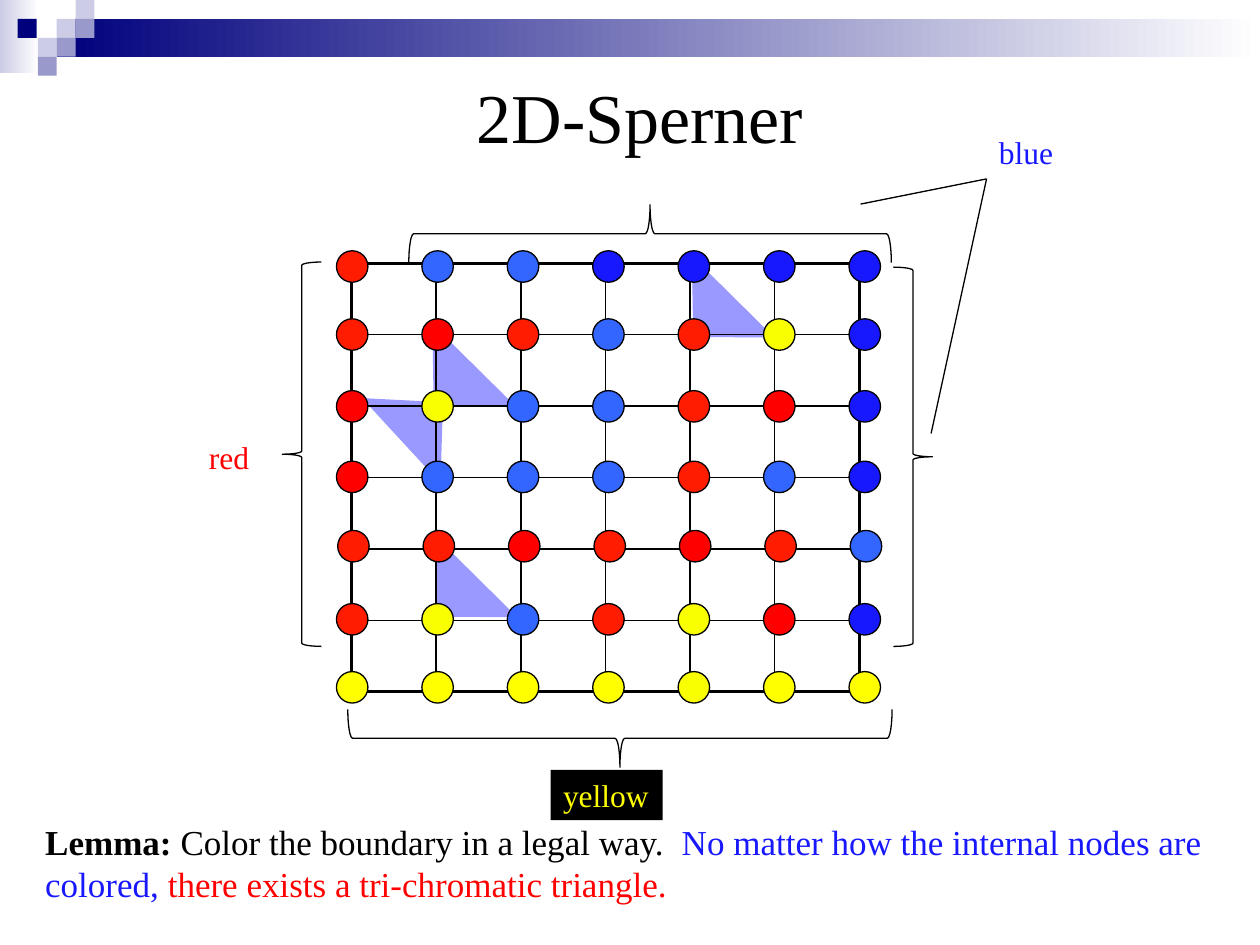
import pptx
import pptx.util
import pptx.dml.color
import pptx.enum.shapes
import pptx.enum.text
import lxml.etree
from pptx.oxml import parse_xml
from pptx.oxml.ns import nsdecls, qn

COLORS = {
    "black": "000000", "white": "FFFFFF", "navy": "00007D",
    "lavender": "CCCCE6", "violet": "9999CC", "triangle": "9999FF",
    "R": "FF0000", "V": "FF1C00", "L": "3366FF", "B": "1818FF",
    "Y": "FFFF00", "y": "F9FF00",
}
RGB = {name: pptx.dml.color.RGBColor.from_string(code) for name, code in COLORS.items()}
SHAPE = pptx.enum.shapes.MSO_SHAPE
FIT = pptx.enum.text.MSO_AUTO_SIZE.SHAPE_TO_FIT_TEXT
Pt = pptx.util.Pt

deck = pptx.Presentation()
deck.slide_width, deck.slide_height = pptx.util.Inches(10), pptx.util.Inches(7.5)
COL, ROW = deck.slide_width / 100, deck.slide_height / 75
slide = deck.slides.add_slide(deck.slide_layouts[5])
shapes = slide.shapes


def box(left, top, width, height):
    """Turn columns and rows of the slide grid into lengths."""
    return int(left * COL), int(top * ROW), int(width * COL), int(height * ROW)


def draw(kind, area, fill=None, line=None, rotation=0):
    """Add a preset shape; two fill names make a left-to-right gradient."""
    shape = shapes.add_shape(kind, *box(*area))
    shape.shadow.inherit = False
    shape.rotation = rotation
    if isinstance(fill, tuple):
        shape.fill.gradient()
        shape.fill.gradient_angle = 0
        for stop, name in zip(shape.fill.gradient_stops, fill):
            stop.color.rgb = RGB[name]
    elif fill:
        shape.fill.solid()
        shape.fill.fore_color.rgb = RGB[fill]
    else:
        shape.fill.background()
    if line:
        shape.line.color.rgb = RGB[line]
        shape.line.width = Pt(0.75)
    else:
        shape.line.fill.background()


# Banner with its checkered corner
draw(SHAPE.RECTANGLE, (0, 0, 3.1, 5.8), ("lavender", "white"))
draw(SHAPE.RECTANGLE, (4.5, 1.5, 95.5, 3), ("navy", "white"))
for left, top, color in [
    (4.5, 1.5, "lavender"), (6, 0, "lavender"), (6, 1.5, "violet"),
    (3, 3, "lavender"), (1.4, 1.5, "navy"), (4.5, 3, "violet"), (3, 4.5, "violet"),
]:
    draw(SHAPE.RECTANGLE, (left, top, 1.5, 1.5), color)

# Title
title = shapes.title
title.left, title.top, title.width, title.height = box(5.8, 1.7, 90, 15)
title.text_frame.text = "2D-Sperner"
title.text_frame.vertical_anchor = pptx.enum.text.MSO_ANCHOR.MIDDLE
title.text_frame.paragraphs[0].alignment = pptx.enum.text.PP_ALIGN.CENTER
title_font = title.text_frame.paragraphs[0].runs[0].font
for attribute, value in {"name": "Times New Roman", "size": Pt(40)}.items():
    setattr(title_font, attribute, value)
title_font.color.rgb = RGB["black"]

# Braces around the four sides of the grid
for kind, area, rotation in [
    (SHAPE.RIGHT_BRACE, (46.9, 37, 4.6, 43.2), 90),
    (SHAPE.LEFT_BRACE, (22.4, 20.8, 3.1, 30.5), 0),
    (SHAPE.RIGHT_BRACE, (49.3, -0.6, 4.6, 38.3), 270),
    (SHAPE.LEFT_BRACE, (70.9, 21.2, 3.1, 30.1), 180),
]:
    draw(kind, area, line="black", rotation=rotation)

# Pointers from the blue label to its two sides
for side_x, side_y in [(68.3, 16.2), (73.9, 34.4)]:
    pointer = shapes.add_connector(
        pptx.enum.shapes.MSO_CONNECTOR.STRAIGHT, *box(side_x, side_y, 78.3, 14.2))
    pointer.line.color.rgb = RGB["black"]
    pointer.line.width = Pt(0.75)
    lxml.etree.SubElement(pointer._element.spPr, qn("a:effectLst"))

# Tri-chromatic triangles
for left, top, rotation in [
    (31.6, 45.1, 224.7), (31.4, 28.3, 224.7), (52, 22.9, 224.7), (28.9, 31.2, 47.3),
]:
    draw(SHAPE.ISOSCELES_TRIANGLE, (left, top, 9.2, 4.5), "triangle", rotation=rotation)

# Grid, with a heavier outer border
CELLS = 6
grid = shapes.add_table(CELLS, CELLS, *box(27.9, 20.9, 40.3, 34)).table
grid.first_row = grid.horz_banding = False
for row in range(CELLS):
    for column in range(CELLS):
        cell = grid.cell(row, column)
        outer = {"lnL": column == 0, "lnR": column == CELLS - 1,
                 "lnT": row == 0, "lnB": row == CELLS - 1}
        for edge, is_outer in outer.items():
            cell._tc.get_or_add_tcPr().append(parse_xml(
                f'<a:{edge} {nsdecls("a")} w="{Pt(2.25 if is_outer else 1)}"><a:solidFill>'
                f'<a:srgbClr val="{COLORS["black"]}"/></a:solidFill></a:{edge}>'))
        cell.fill.background()

# Colored nodes: top of each row, shift to the right, color of each node
for top, shift, node_colors in [
    (19.9, 0, "VLLBBBB"),
    (25.3, 0, "VRVLVyB"),
    (31, 0, "RyLLVRB"),
    (36.6, 0, "RLLLVLB"),
    (42.1, 0.1, "VVRVRVL"),
    (47.9, 0, "VyLVyRB"),
    (53.3, 0, "YYYYyYY"),
]:
    for column, color in enumerate(node_colors):
        draw(SHAPE.OVAL, (26.7 + shift + 6.78 * column, top, 2.5, 2.5), color, "black")

# Side labels and the lemma
for area, size, wrap, background, runs in [
    ((43.7, 61.1, 8.9, 4), 18, False, "black", [("yellow", "Y", False)]),
    ((15.6, 34.3, 5.2, 4), 18, False, None, [("red", "R", False)]),
    ((78.3, 10.1, 6.4, 4), 18, False, None, [("blue", "B", False)]),
    ((2.6, 64.6, 94.9, 7.7), 20, True, None, [
        ("Lemma: ", "black", True),
        ("Color the boundary in a legal way.  ", "black", False),
        ("No matter how the internal nodes are colored, ", "B", False),
        ("there exists a tri-chromatic triangle.", "R", False),
    ]),
]:
    label = shapes.add_textbox(*box(*area))
    if background:
        label.fill.solid()
        label.fill.fore_color.rgb = RGB[background]
    for attribute, value in {"word_wrap": wrap, "auto_size": FIT}.items():
        setattr(label.text_frame, attribute, value)
    for words, color, bold in runs:
        run = label.text_frame.paragraphs[0].add_run()
        run.text = words
        run_format = {"name": "Times New Roman", "size": Pt(size), "bold": bold}
        for attribute, value in run_format.items():
            setattr(run.font, attribute, value)
        run.font.color.rgb = RGB[color]

deck.save("out.pptx")
